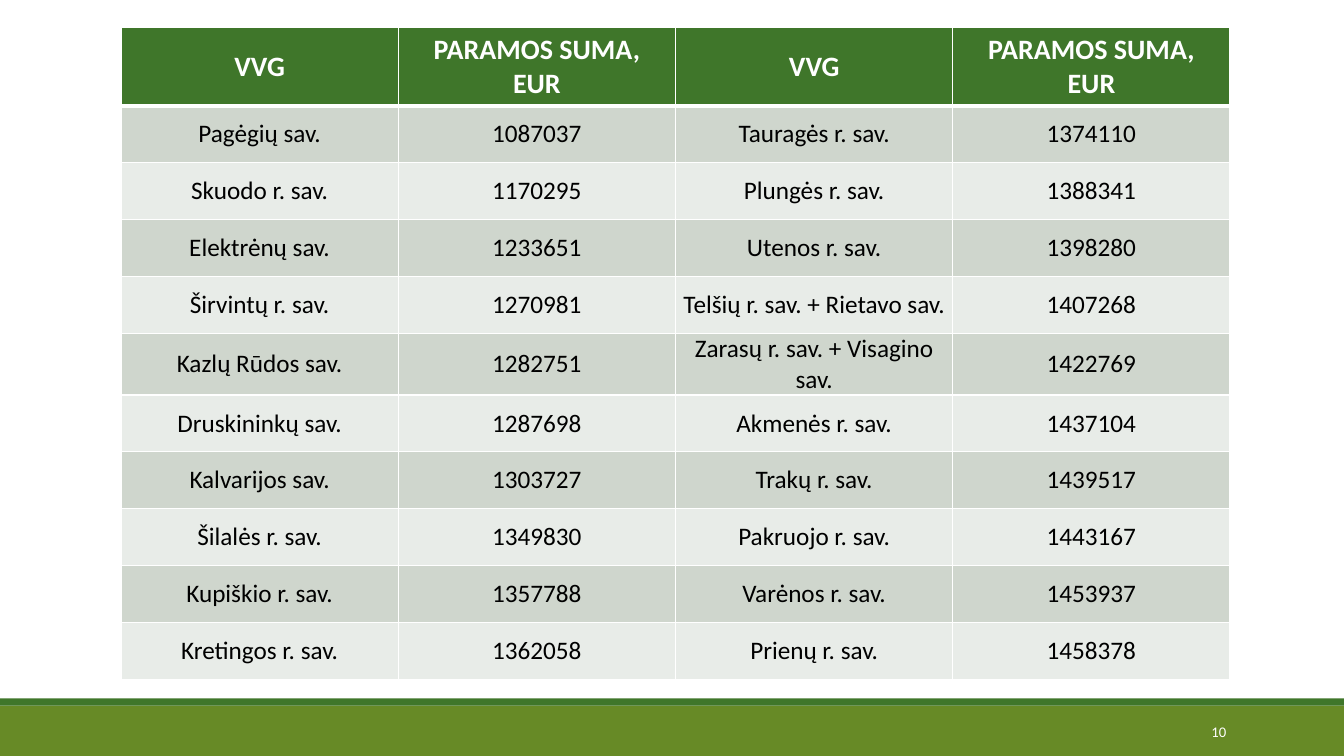
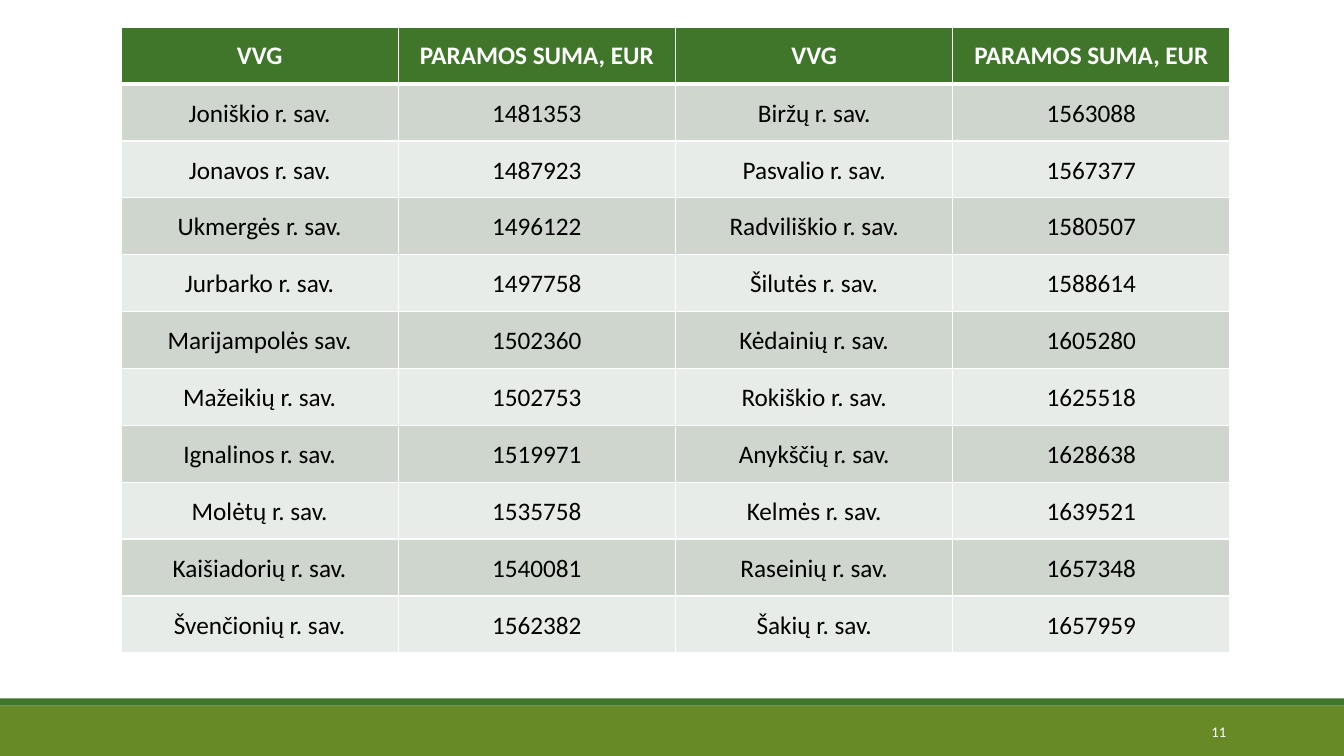
import pptx
import pptx.dml.color
import pptx.enum.shapes
import pptx.enum.text
import pptx.oxml.ns
import pptx.util
import lxml.etree

INCH = pptx.util.Inches(1)
WIDTH, HEIGHT = 13.33, 7.5
FONT = "Calibri"
GREEN, OLIVE, WHITE, BLACK = "3F762A", "678A26", "FFFFFF", "000000"
ROW_TINTS = ["CFD6CD", "E8ECE8"]
HEADINGS = ["VVG", "PARAMOS SUMA, EUR"] * 2
CENTER, RIGHT = pptx.enum.text.PP_ALIGN.CENTER, pptx.enum.text.PP_ALIGN.RIGHT
MIDDLE = pptx.enum.text.MSO_ANCHOR.MIDDLE

# Table grid: four equal columns, eleven equal rows
TABLE_LEFT, TABLE_TOP, TABLE_WIDTH, TABLE_HEIGHT = 1.2, 0.27, 11, 6.21

# Footer: a thin green strip on top of an olive band
FOOTER_BANDS = [(7, 0.5, OLIVE), (6.93, 0.07, GREEN)]

SUPPORT_TABLES = [
    {"number": "10", "heading_size": 20, "line_spacing": 1.0, "rows": [
        ("Pagėgių sav.", "1087037", "Tauragės r. sav.", "1374110"),
        ("Skuodo r. sav.", "1170295", "Plungės r. sav.", "1388341"),
        ("Elektrėnų sav.", "1233651", "Utenos r. sav.", "1398280"),
        ("Širvintų r. sav.", "1270981", "Telšių r. sav. + Rietavo sav.", "1407268"),
        ("Kazlų Rūdos sav.", "1282751", "Zarasų r. sav. + Visagino sav.", "1422769"),
        ("Druskininkų sav.", "1287698", "Akmenės r. sav.", "1437104"),
        ("Kalvarijos sav.", "1303727", "Trakų r. sav.", "1439517"),
        ("Šilalės r. sav.", "1349830", "Pakruojo r. sav.", "1443167"),
        ("Kupiškio r. sav.", "1357788", "Varėnos r. sav.", "1453937"),
        ("Kretingos r. sav.", "1362058", "Prienų r. sav.", "1458378"),
    ]},
    {"number": "11", "heading_size": 18, "line_spacing": 1.07, "rows": [
        ("Joniškio r. sav.", "1481353", "Biržų r. sav.", "1563088"),
        ("Jonavos r. sav.", "1487923", "Pasvalio r. sav.", "1567377"),
        ("Ukmergės r. sav.", "1496122", "Radviliškio r. sav.", "1580507"),
        ("Jurbarko r. sav.", "1497758", "Šilutės r. sav.", "1588614"),
        ("Marijampolės sav.", "1502360", "Kėdainių r. sav.", "1605280"),
        ("Mažeikių r. sav.", "1502753", "Rokiškio r. sav.", "1625518"),
        ("Ignalinos r. sav.", "1519971", "Anykščių r. sav.", "1628638"),
        ("Molėtų r. sav.", "1535758", "Kelmės r. sav.", "1639521"),
        ("Kaišiadorių r. sav.", "1540081", "Raseinių r. sav.", "1657348"),
        ("Švenčionių r. sav.", "1562382", "Šakių r. sav.", "1657959"),
    ]},
]


def paint(color_format, color):
    color_format.rgb = pptx.dml.color.RGBColor.from_string(color)


def write(frame, text, size, color, bold=False, align=CENTER, spacing=1.0):
    paragraph = frame.paragraphs[0]
    paragraph.alignment, paragraph.line_spacing = align, spacing
    run = paragraph.add_run()
    run.text = text
    style = {"name": FONT, "size": pptx.util.Pt(size), "bold": bold}
    for attribute, value in style.items():
        setattr(run.font, attribute, value)
    paint(run.font.color, color)


deck = pptx.Presentation()
deck.slide_width, deck.slide_height = int(WIDTH * INCH), int(HEIGHT * INCH)
blank_layout = deck.slide_layouts[6]
slides = [deck.slides.add_slide(blank_layout) for _ in SUPPORT_TABLES]

# Footer bands, moved to the master so that every slide shows them
for index, (top, height, color) in enumerate(FOOTER_BANDS):
    band = slides[0].shapes.add_shape(
        pptx.enum.shapes.MSO_SHAPE.RECTANGLE,
        0, int(top * INCH), deck.slide_width, int(height * INCH))
    band.shadow.inherit = False
    band.fill.solid()
    paint(band.fill.fore_color, color)
    band.line.fill.background()
    band.element.nvSpPr.cNvPr.set("id", str(100 + index))
    deck.slide_master.shapes.element.append(band.element)

for slide, content in zip(slides, SUPPORT_TABLES):
    # Support table
    grid = [HEADINGS] + content["rows"]
    table = slide.shapes.add_table(
        len(grid), len(HEADINGS),
        *(int(length * INCH) for length in
          (TABLE_LEFT, TABLE_TOP, TABLE_WIDTH, TABLE_HEIGHT))).table
    for row, texts in enumerate(grid):
        heading = row == 0
        for column, text in enumerate(texts):
            cell = table.cell(row, column)
            cell.vertical_anchor = MIDDLE
            if heading:
                fill = GREEN
                write(cell.text_frame, text, content["heading_size"], WHITE, bold=True)
            else:
                fill = ROW_TINTS[(row - 1) % 2]
                write(cell.text_frame, text, 18, BLACK, spacing=content["line_spacing"])
                cell.margin_left = cell.margin_right = int(0.07 * INCH)
                cell.margin_top = cell.margin_bottom = 0

            # White borders, thicker between the headings and the first row
            borders = {"lnL": 1, "lnR": 1, "lnT": 3 if row == 1 else 1,
                       "lnB": 3 if heading else 1}
            properties = cell._tc.get_or_add_tcPr()
            for side, points in borders.items():
                border = lxml.etree.SubElement(
                    properties, pptx.oxml.ns.qn("a:" + side), w=str(pptx.util.Pt(points)))
                solid = lxml.etree.SubElement(border, pptx.oxml.ns.qn("a:solidFill"))
                lxml.etree.SubElement(solid, pptx.oxml.ns.qn("a:srgbClr"), val=WHITE)
            cell.fill.solid()
            paint(cell.fill.fore_color, fill)

    # Slide number
    number_frame = slide.shapes.add_textbox(
        *(int(length * INCH) for length in (10.83, 7.06, 1.43, 0.4))).text_frame
    number_frame.word_wrap = True
    number_frame.vertical_anchor = MIDDLE
    write(number_frame, content["number"], 10.5, WHITE, align=RIGHT)

deck.save("out.pptx")
